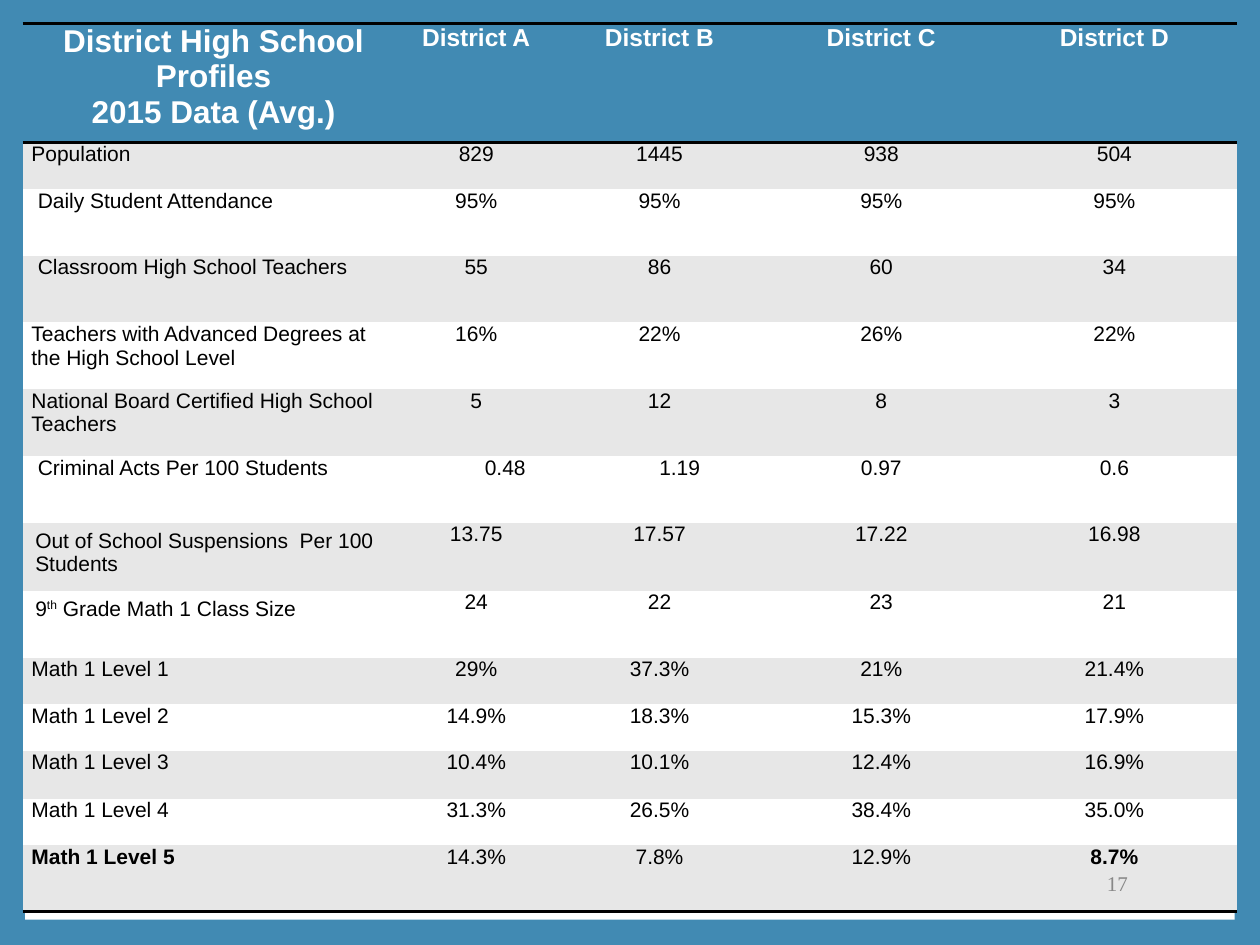
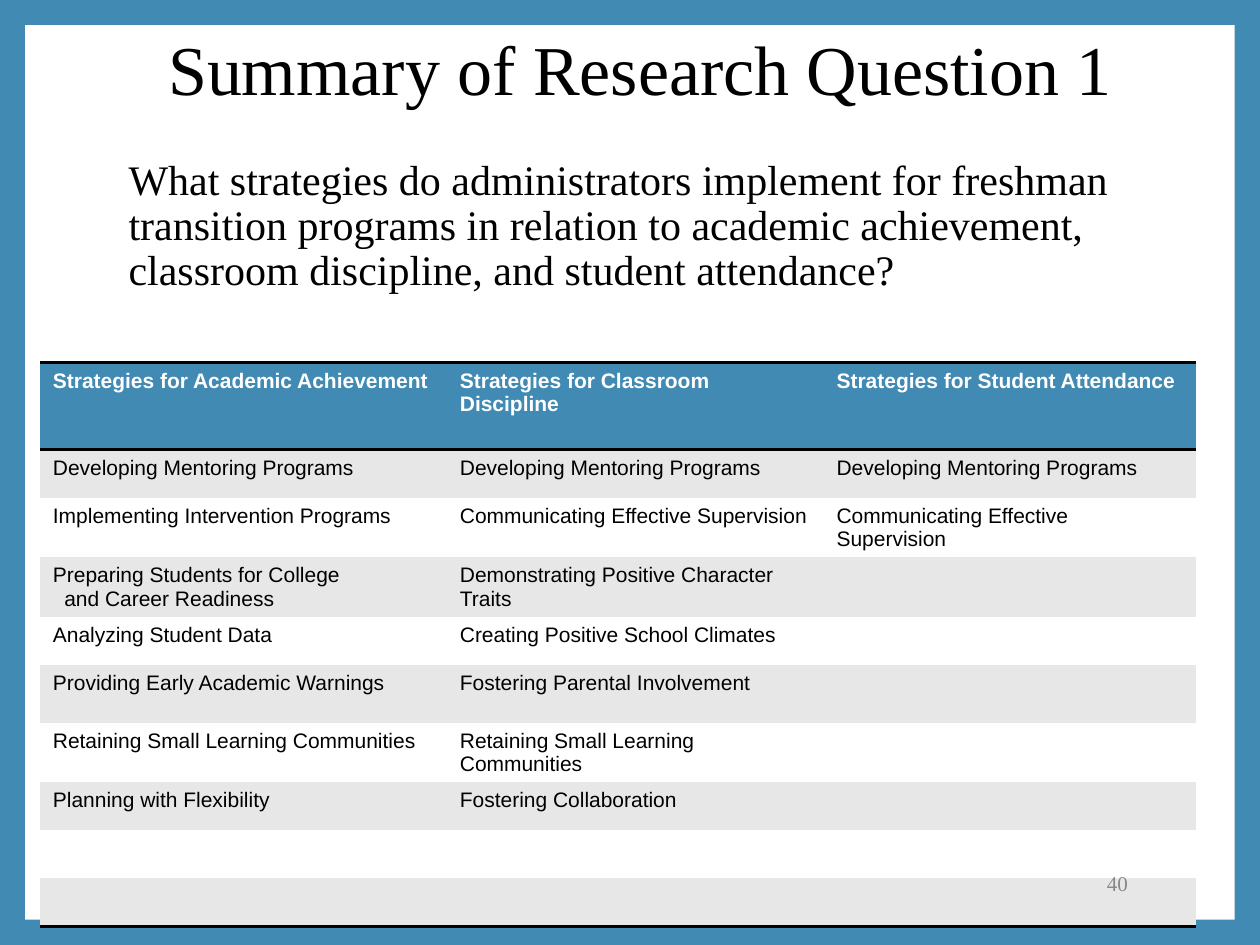
from lxml import etree
from pptx import Presentation
from pptx.dml.color import RGBColor
from pptx.enum.shapes import MSO_SHAPE
from pptx.enum.text import MSO_ANCHOR, MSO_AUTO_SIZE, PP_ALIGN
from pptx.oxml.ns import qn
from pptx.util import Inches, Pt

LEFT, CENTER, RIGHT = PP_ALIGN.LEFT, PP_ALIGN.CENTER, PP_ALIGN.RIGHT
TOP, MIDDLE = MSO_ANCHOR.TOP, MSO_ANCHOR.MIDDLE
RECTANGLE, NO_AUTOFIT = MSO_SHAPE.RECTANGLE, MSO_AUTO_SIZE.NONE

COLORS = {"blue": "418AB3", "white": "FFFFFF", "band": "E7E7E7",
          "black": "000000", "gray": "888888"}
SANS, SERIF = "Arial", "Times New Roman"
PLAIN_STYLE = "{2D5ABB26-0587-4C30-8999-92F81FD0307C}"
TITLE_LAYOUT, BLANK_LAYOUT = 1, 6

# Content: a cell with "\n" holds several paragraphs, and ^th^ is superscript
PROFILES = [
    ("District High School Profiles\n2015 Data (Avg.)",
     "District A", "District B", "District C", "District D"),
    ("Population", "829", "1445", "938", "504"),
    ("Daily Student Attendance", "95%", "95%", "95%", "95%"),
    ("Classroom High School Teachers", "55", "86", "60", "34"),
    ("Teachers with Advanced Degrees at the High School Level",
     "16%", "22%", "26%", "22%"),
    ("National Board Certified High School Teachers", "5", "12", "8", "3"),
    ("Criminal Acts Per 100 Students", "0.48", "1.19", "0.97", "0.6"),
    ("Out of School Suspensions  Per 100 Students",
     "13.75", "17.57", "17.22", "16.98"),
    ("9^th^ Grade Math 1 Class Size", "24", "22", "23", "21"),
    ("Math 1 Level 1", "29%", "37.3%", "21%", "21.4%"),
    ("Math 1 Level 2", "14.9%", "18.3%", "15.3%", "17.9%"),
    ("Math 1 Level 3", "10.4%", "10.1%", "12.4%", "16.9%"),
    ("Math 1 Level 4", "31.3%", "26.5%", "38.4%", "35.0%"),
    ("Math 1 Level 5", "14.3%", "7.8%", "12.9%", "8.7%"),
]
PROFILE_WIDTHS = [3.03, 1.14, 1.77, 1.75, 1.95]
PROFILE_HEIGHTS = [0.94, 0.37] + [0.53] * 5 + [0.54, 0.53] + [0.37, 0.37, 0.38, 0.37, 0.53]
PROFILE_INSETS = (0.07, 0)
ROOMY_INSETS = (0.1, 0.05)
# Cells (row, column) that depart from the table's rule
PROFILE_SPECIAL = {
    (0, 0): {"size": 18},
    (2, 0): {"indent": 0.05},
    (3, 0): {"indent": 0.05},
    (6, 0): {"indent": 0.05},
    (6, 1): {"indent": 0.46},
    (6, 2): {"indent": 0.32},
    (7, 0): {"insets": ROOMY_INSETS},
    (8, 0): {"insets": ROOMY_INSETS},
    (13, 0): {"bold": True},
    (13, 4): {"bold": True},
}

SUMMARY_TITLE = "Summary of Research Question 1"
QUESTION = ("What strategies do administrators implement for freshman transition "
            "programs in relation to academic achievement, classroom discipline, "
            "and student attendance?")
STRATEGIES = [
    ("Strategies for Academic Achievement", "Strategies for Classroom Discipline",
     "Strategies for Student Attendance"),
    ("Developing Mentoring Programs",) * 3,
    ("Implementing Intervention Programs", "Communicating Effective Supervision",
     "Communicating Effective Supervision"),
    ("Preparing Students for College\nand Career Readiness",
     "Demonstrating Positive Character Traits", ""),
    ("Analyzing Student Data", "Creating Positive School Climates", ""),
    ("Providing Early Academic Warnings", "Fostering Parental Involvement", ""),
    ("Retaining Small Learning Communities", "Retaining Small Learning Communities", ""),
    ("Planning with Flexibility", "Fostering Collaboration", ""),
    ("",) * 3,
    ("",) * 3,
]
STRATEGY_WIDTHS = [3.23, 2.99, 2.95]
STRATEGY_HEIGHTS = [0.69, 0.38, 0.47, 0.47, 0.38, 0.46, 0.47, 0.38, 0.38, 0.38]
STRATEGY_SPECIAL = {(3, 0): {"later_indent": 0.09}}


def rgb(name):
    return RGBColor.from_string(COLORS[name])


def write(frame, text, size=12, font=SANS, color="black", bold=False, align=LEFT,
          indent=0, later_indent=None, line_spacing=None, space_before=None):
    """Fill a text frame, one paragraph per line of text."""
    frame.word_wrap = True
    for number, line in enumerate(text.split("\n")):
        para = frame.add_paragraph() if number else frame.paragraphs[0]
        para.alignment = align
        para.line_spacing = line_spacing
        para.space_before = space_before
        shift = later_indent if number and later_indent else indent
        properties = para._p.get_or_add_pPr()
        properties.set("marL", str(Inches(shift)))
        properties.set("indent", "0")
        etree.SubElement(properties, qn("a:buNone"))
        if not line:
            ending = etree.SubElement(para._p, qn("a:endParaRPr"))
            ending.set("sz", str(size * 100))
        for part, words in enumerate(line.split("^")):
            if not words:
                continue
            span = para.add_run()
            span.text = words
            span.font.size, span.font.name, span.font.bold = Pt(size), font, bold
            span.font.color.rgb = rgb(color)
            if part % 2:
                span.font._element.set("baseline", "30000")


def add_border(cell, side):
    line = etree.SubElement(cell._tc.get_or_add_tcPr(), qn("a:" + side), w=str(Pt(2)))
    fill = etree.SubElement(line, qn("a:solidFill"))
    etree.SubElement(fill, qn("a:srgbClr"), val=COLORS["black"])


def add_banded_table(page, left, top, rows, widths, heights, header_size=12,
                     insets=ROOMY_INSETS, value_align=LEFT, special=None):
    """Blue header, gray and white bands, black rules around header and at the end."""
    frame = page.shapes.add_table(len(rows), len(widths), Inches(left), Inches(top),
                                  Inches(sum(widths)), Inches(sum(heights)))
    table = frame.table
    table._tbl.tblPr.find(qn("a:tableStyleId")).text = PLAIN_STYLE
    for column, width in zip(table.columns, widths):
        column.width = Inches(width)
    for r, (texts, height) in enumerate(zip(rows, heights)):
        table.rows[r].height = Inches(height)
        header = r == 0
        for c, text in enumerate(texts):
            cell = table.cell(r, c)
            style = {"size": header_size if header else 12, "bold": header,
                     "color": "white" if header else "black",
                     "align": value_align if header or c else LEFT,
                     "insets": insets}
            style.update((special or {}).get((r, c), {}))
            side, edge = style.pop("insets")
            cell.margin_left = cell.margin_right = Inches(side)
            cell.margin_top = cell.margin_bottom = Inches(edge)
            if header:
                add_border(cell, "lnT")
            if header or r == len(rows) - 1:
                add_border(cell, "lnB")
            cell.fill.solid()
            cell.fill.fore_color.rgb = rgb("blue" if header else "band" if r % 2 else "white")
            write(cell.text_frame, text, **style)


def place(shape, left, top, width, height, anchor):
    shape.left, shape.top = Inches(left), Inches(top)
    shape.width, shape.height = Inches(width), Inches(height)
    shape.text_frame.auto_size = NO_AUTOFIT
    shape.text_frame.vertical_anchor = anchor


def add_page_number(page, number):
    box = page.shapes.add_textbox(0, 0, 0, 0)
    place(box, 7.65, 6.81, 1.4, 0.4, MIDDLE)
    write(box.text_frame, number, font=SERIF, color="gray", align=RIGHT)


def set_up_master(deck, page):
    """Blue background with a white panel, shared by all pages."""
    master = deck.slide_master
    master.background.fill.solid()
    master.background.fill.fore_color.rgb = rgb("blue")
    panel = page.shapes.add_shape(RECTANGLE, Inches(0.2), Inches(0.2),
                                  Inches(9.6), Inches(7.1))
    panel.shadow.inherit = False
    panel.fill.solid()
    panel.fill.fore_color.rgb = rgb("white")
    panel.line.fill.background()
    master.shapes._spTree.insert(2, panel._element)


def main():
    deck = Presentation()
    deck.slide_width, deck.slide_height = Inches(10), Inches(7.5)

    # District profiles
    page = deck.slides.add_slide(deck.slide_layouts[BLANK_LAYOUT])
    set_up_master(deck, page)
    add_banded_table(page, 0.18, 0.19, PROFILES, PROFILE_WIDTHS, PROFILE_HEIGHTS,
                     header_size=14, insets=PROFILE_INSETS, value_align=CENTER,
                     special=PROFILE_SPECIAL)
    add_page_number(page, "17")

    # Research question and its strategies
    page = deck.slides.add_slide(deck.slide_layouts[TITLE_LAYOUT])
    title, body = page.placeholders
    place(title, 0.58, 0.16, 9, 0.83, MIDDLE)
    write(title.text_frame, SUMMARY_TITLE, size=40, font=SERIF, align=CENTER,
          line_spacing=0.9)
    add_banded_table(page, 0.32, 2.88, STRATEGIES, STRATEGY_WIDTHS, STRATEGY_HEIGHTS,
                     special=STRATEGY_SPECIAL)
    place(body, 0.88, 1.21, 8.1, 4.42, TOP)
    write(body.text_frame, QUESTION, size=24, font=SERIF, indent=0.04,
          line_spacing=0.9, space_before=Pt(10))
    add_page_number(page, "40")

    deck.save("out.pptx")


if __name__ == "__main__":
    main()
